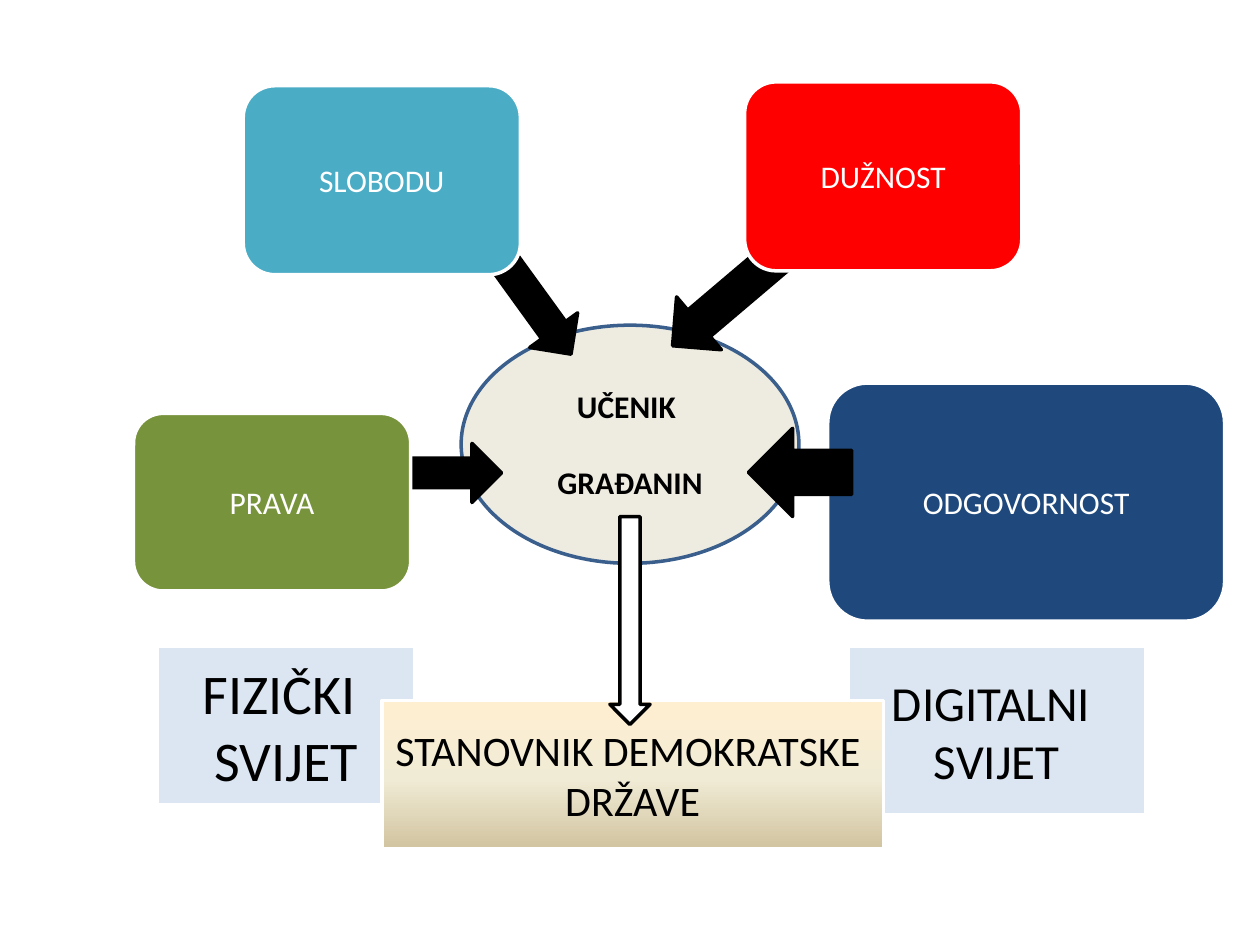
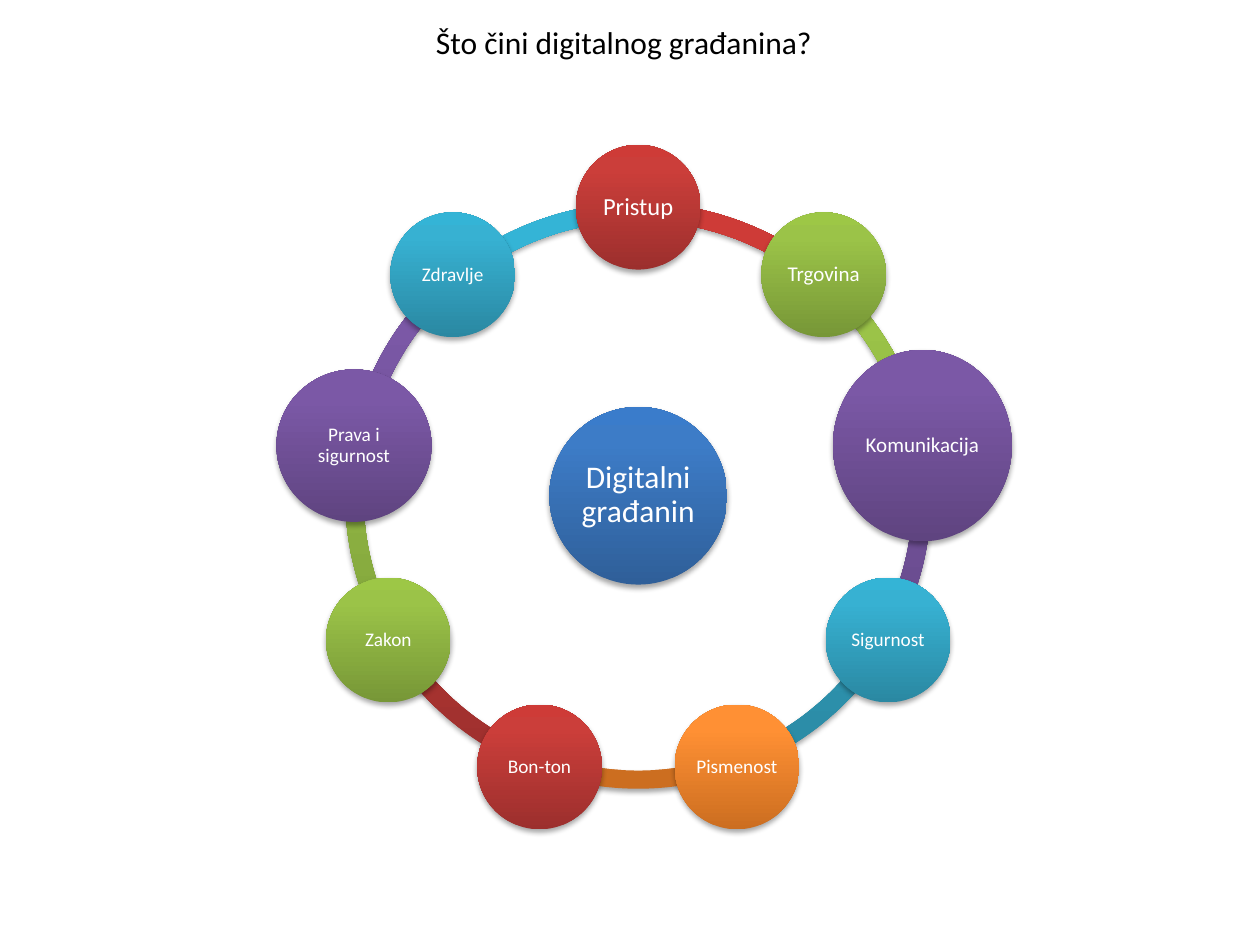
import math

import lxml.etree
import pptx
import pptx.dml.color
import pptx.enum.shapes
import pptx.enum.text
import pptx.oxml.ns
import pptx.util

Pt = pptx.util.Pt
SHAPES = pptx.enum.shapes.MSO_SHAPE
ALIGN = pptx.enum.text.PP_ALIGN
ANCHOR = pptx.enum.text.MSO_ANCHOR
qn = pptx.oxml.ns.qn

FONT = "Calibri"
PAGE_BOX = (0, 0, 720, 540)
TITLE_BOX = (241.9, 9.4, 231.1, 28.8)
RING_BOX = (197.3, 115.9, 334.8, 334.8)

COLOURS = {
    "black": "000000",
    "white": "FFFFFF",
    "cream": "EEECE1",
    "outline": "3A5F8C",
    "aqua": "4BACC6",
    "red": "FF0000",
    "olive": "77933C",
    "navy": "1F497D",
    "pale": "DCE6F2",
}
SAND = ((0, "FFEFD1"), (53, "F0EBD5"), (100, "D1C39F"))
GLOSS = {
    "blue": ((0, "2F5F99"), (80, "3D7CC7"), (100, "3A7CCB")),
    "red": ((0, "9C2F2D"), (80, "CB3E3A"), (100, "CE3B37")),
    "green": ((0, "779737"), (80, "9BC348"), (100, "9DC746")),
    "purple": ((0, "5F4480"), (80, "7B58A6"), (100, "7C57A8")),
    "teal": ((0, "2A88A2"), (80, "37B1D2"), (100, "34B4D6")),
    "orange": ((0, "CC6E20"), (80, "FF9034"), (100, "FF9136")),
}

VALUES = (
    ("SLOBODU", "aqua", (139, 49, 158.4, 108)),
    ("DUŽNOST", "red", (425.5, 46.8, 158.4, 108)),
    ("PRAVA", "olive", (76.3, 236.2, 158.4, 101.5)),
    ("ODGOVORNOST", "navy", (473, 218.9, 226.8, 136.1)),
)
ARROWS_BEHIND = (
    (SHAPES.RIGHT_ARROW, "black", (229.7, 253.4, 56.9, 33.8), 0),
    (SHAPES.RIGHT_ARROW, "black", (375.1, 152.6, 77.8, 39.6), 139.7),
    (SHAPES.RIGHT_ARROW, "black", (263.5, 153.4, 79.2, 33.8), 54.1),
)
ARROWS_IN_FRONT = (
    (SHAPES.LEFT_ARROW, "black", (427.7, 244.8, 59, 50.4), 0),
    (SHAPES.DOWN_ARROW, "white", (348.5, 295.2, 23, 118.8), 0),
)
WORLDS = (
    (("FIZIČKI ", "SVIJET"), 32, (90, 369.4, 146.9, 90.7)),
    (("DIGITALNI ", "SVIJET"), 28, (484.6, 369.4, 169.9, 96.5)),
)

NODE_SIZE = (71.3, 71.3)
NODES = (
    ("Pristup", "red", 14, NODE_SIZE),
    ("Trgovina", "green", 12, NODE_SIZE),
    ("Komunikacija", "purple", 12, (102.2, 109.4)),
    ("Sigurnost", "teal", 11, NODE_SIZE),
    ("Pismenost", "orange", 11, NODE_SIZE),
    ("Bon-ton", "red", 11, NODE_SIZE),
    ("Zakon", "green", 11, NODE_SIZE),
    ("Prava i sigurnost", "purple", 11, (88.6, 87.1)),
    ("Zdravlje", "teal", 11, NODE_SIZE),
)


def rgb(name):
    return pptx.dml.color.RGBColor.from_string(COLOURS[name])


def write(shape, lines, size=18, colour="black", bold=False, align=ALIGN.CENTER,
          anchor=ANCHOR.MIDDLE, wrap=True, inset=None, spacing=None, gap=0):
    frame = shape.text_frame
    frame.word_wrap = wrap
    frame.vertical_anchor = anchor
    if inset is not None:
        frame.margin_left = frame.margin_right = Pt(inset)
        frame.margin_top = frame.margin_bottom = Pt(inset)
    for index, line in enumerate(lines):
        para = frame.paragraphs[0] if index == 0 else frame.add_paragraph()
        para.alignment = align
        if spacing:
            para.line_spacing = spacing
        if index:
            para.space_before = Pt(gap)
        span = para.add_run()
        span.text = line
        span.font.name = FONT
        span.font.size = Pt(size)
        span.font.bold = bold
        span.font.color.rgb = rgb(colour)


def fill_gradient(shape, stops, angle):
    shape.fill.gradient()
    shape.fill.gradient_angle = 360 - angle
    stop_list = shape.element.spPr.find(qn("a:gradFill")).find(qn("a:gsLst"))
    for stop in list(stop_list):
        stop_list.remove(stop)
    for position, value in stops:
        stop = lxml.etree.SubElement(stop_list, qn("a:gs"), pos=str(position * 1000))
        lxml.etree.SubElement(stop, qn("a:srgbClr"), val=value)


def add_part(page, kind, box, fill=None, line=None, origin=(0, 0)):
    left, top, width, height = box
    shape = page.shapes.add_shape(kind, Pt(origin[0] + left), Pt(origin[1] + top),
                                  Pt(width), Pt(height))
    shape.shadow.inherit = False
    if fill:
        shape.fill.solid()
        shape.fill.fore_color.rgb = rgb(fill)
    if line:
        shape.line.color.rgb = rgb(line)
        shape.line.width = Pt(2)
    else:
        shape.line.fill.background()
    return shape


def add_glossy(page, kind, box, colour):
    shape = add_part(page, kind, box)
    fill_gradient(shape, GLOSS[colour], 270)
    effects = shape.element.spPr.find(qn("a:effectLst"))
    shadow = lxml.etree.SubElement(effects, qn("a:outerShdw"), blurRad=str(Pt(3.1)),
                                   dist=str(Pt(1.8)), dir="5400000", rotWithShape="0")
    tint = lxml.etree.SubElement(shadow, qn("a:srgbClr"), val=COLOURS["black"])
    lxml.etree.SubElement(tint, qn("a:alpha"), val="35000")
    return shape


def add_disc(page, centre, size, text, colour, text_size, inset):
    box = (centre[0] - size[0] / 2, centre[1] - size[1] / 2, *size)
    disc = add_glossy(page, SHAPES.OVAL, box, colour)
    write(disc, [text], size=text_size, colour="white", inset=inset, spacing=0.9)


def add_arrows(page, origin, arrows):
    for kind, fill, box, turn in arrows:
        arrow = add_part(page, kind, box, fill, "black", origin)
        arrow.rotation = turn


def add_citizen_diagram(page, box):
    origin = box[:2]
    pupil = add_part(page, SHAPES.OVAL, (263.5, 185.8, 193, 136.1), "cream", "outline", origin)
    write(pupil, ["UČENIK ", "GRAĐANIN"], bold=True, gap=22)
    add_arrows(page, origin, ARROWS_BEHIND)
    for text, fill, place in VALUES:
        card = add_part(page, SHAPES.ROUNDED_RECTANGLE, place, fill, "white", origin)
        write(card, [text], colour="white")
    for lines, size, place in WORLDS:
        world = add_part(page, SHAPES.RECTANGLE, place, "pale", "white", origin)
        write(world, lines, size=size)
    resident = add_part(page, SHAPES.RECTANGLE, (218.2, 400.3, 286.6, 85), None, "white", origin)
    fill_gradient(resident, SAND, 90)
    write(resident, ["STANOVNIK DEMOKRATSKE ", "DRŽAVE"], size=24)
    add_arrows(page, origin, ARROWS_IN_FRONT)


def add_title(page, box, text):
    title = page.shapes.title
    title.left, title.top, title.width, title.height = map(Pt, box)
    write(title, [text], align=ALIGN.LEFT, anchor=ANCHOR.TOP, wrap=False)
    title.text_frame.auto_size = pptx.enum.text.MSO_AUTO_SIZE.SHAPE_TO_FIT_TEXT


def add_ring(page, box):
    left, top, width, height = box
    centre = (left + width / 2, top + height / 2)
    radius = width * 0.4925
    step = 360 / len(NODES)
    angles = [(270 + step * index) % 360 for index in range(len(NODES))]
    for angle, node in reversed(list(zip(angles, NODES))):
        arc = add_glossy(page, SHAPES.BLOCK_ARC, box, node[1])
        arc.adjustments[0] = angle * 0.6
        arc.adjustments[1] = (angle + step) % 360 * 0.6
        arc.adjustments[2] = 0.031
    add_disc(page, centre, (101.5, 101.5), "Digitalni građanin", "blue", 18, 2)
    for angle, (text, colour, text_size, size) in zip(angles, NODES):
        turn = math.radians(angle)
        spot = (centre[0] + radius * math.cos(turn), centre[1] + radius * math.sin(turn))
        add_disc(page, spot, size, text, colour, text_size, 1.4)


def main():
    deck = pptx.Presentation()
    deck.slide_width, deck.slide_height = map(Pt, PAGE_BOX[2:])
    add_citizen_diagram(deck.slides.add_slide(deck.slide_layouts[6]), PAGE_BOX)
    page = deck.slides.add_slide(deck.slide_layouts[5])
    add_title(page, TITLE_BOX, "Što čini digitalnog građanina?")
    add_ring(page, RING_BOX)
    deck.save("out.pptx")


if __name__ == "__main__":
    main()
